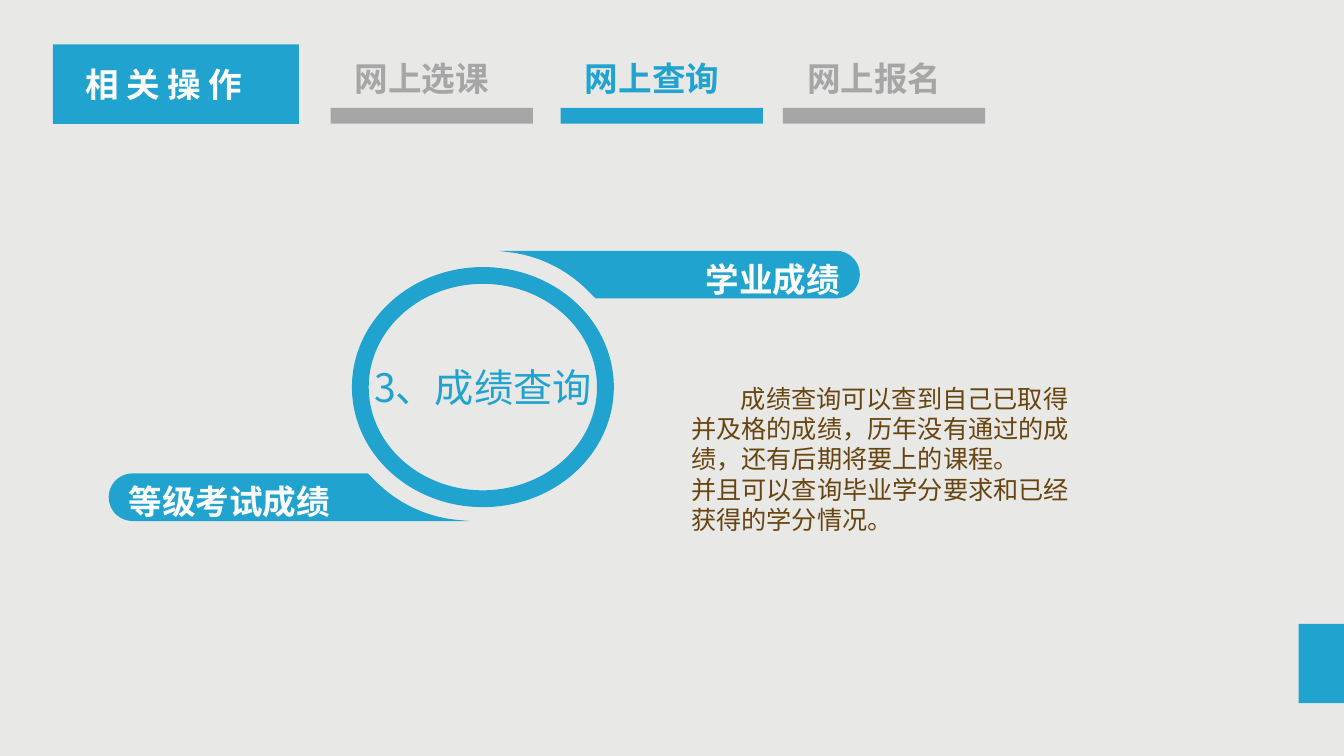
import math
from dataclasses import dataclass

import pptx
import pptx.util
import pptx.dml.color
import pptx.enum.shapes
import pptx.enum.text
import pptx.oxml
import pptx.oxml.ns

Cm = pptx.util.Cm
Pt = pptx.util.Pt
SHAPE = pptx.enum.shapes.MSO_SHAPE
ALIGN = pptx.enum.text.PP_ALIGN
ANCHOR = pptx.enum.text.MSO_ANCHOR


@dataclass(frozen=True)
class Theme:
    background: str = "E8E8E6"
    accent: str = "21A3D0"
    muted: str = "A6A6A6"
    light: str = "FFFFFF"
    brown: str = "684410"
    font: str = "Noto Sans CJK SC"
    body_font: str = "Calibri"
    heading: int = 24
    topic: int = 28
    body: int = 18


THEME = Theme()


def rgb(value):
    return pptx.dml.color.RGBColor.from_string(value)


def paint(sp, color):
    sp.shadow.inherit = False
    sp.fill.solid()
    sp.fill.fore_color.rgb = rgb(color)
    sp.line.fill.background()


def write(sp, text, size, color, bold=False, align=ALIGN.LEFT, font=THEME.font,
          anchor=ANCHOR.MIDDLE, wrap=True, side=0.25, spacing=1.0):
    tf = sp.text_frame
    tf.text = text
    tf.word_wrap = wrap
    tf.vertical_anchor = anchor
    tf.margin_left = tf.margin_right = Cm(side)
    tf.margin_top = tf.margin_bottom = Cm(0.13)
    for p in tf.paragraphs:
        p.alignment = align
        p.line_spacing = spacing
        for r in p.runs:
            r.font.name = font
            r.font.size = Pt(size)
            r.font.bold = bold
            r.font.color.rgb = rgb(color)
            ea = pptx.oxml.parse_xml(
                f'<a:ea {pptx.oxml.ns.nsdecls("a")} typeface="{THEME.font}"/>')
            r.font._element.find(pptx.oxml.ns.qn("a:latin")).addnext(ea)
    return tf


def add_bar(s, left, top, width, height, color):
    sp = s.shapes.add_shape(SHAPE.RECTANGLE, Cm(left), Cm(top), Cm(width), Cm(height))
    paint(sp, color)


def add_title(s, text):
    sp = s.shapes.title
    sp.left, sp.top, sp.width, sp.height = Cm(1.33), Cm(1.12), Cm(6.2), Cm(2)
    sp.fill.solid()
    sp.fill.fore_color.rgb = rgb(THEME.accent)
    write(sp, text, THEME.heading, THEME.light, bold=True, side=0.82)


def add_tab(s, left, text, color):
    add_bar(s, left, 2.72, 5.1, 0.4, color)
    sp = s.shapes.add_textbox(Cm(left + 0.36), Cm(1.32), Cm(4.4), Cm(1.28))
    write(sp, text, THEME.heading, color, bold=True, align=ALIGN.JUSTIFY,
          anchor=ANCHOR.TOP)


def bezier(points, steps=16):
    for i in range(1, steps + 1):
        t = i / steps
        weights = ((1 - t) ** 3, 3 * t * (1 - t) ** 2, 3 * t * t * (1 - t), t ** 3)
        yield tuple(sum(w * pt[axis] for w, pt in zip(weights, points)) for axis in (0, 1))


def add_banner(s, cap_x, cap_y, corner, direction, text, align):
    radius = 0.6
    tip = (-8.5, -radius)
    angles = [math.radians(a) for a in range(-90, 91, 10)]
    cap = [(radius * math.cos(a), radius * math.sin(a)) for a in angles]
    sweep = [(-corner - dx, y) for dx, y in
             ((0.2, 0.4), (0.74, -0.14), (1.45, -0.49), (2.23, -0.57))]
    outline = [tip, *cap, (-corner, radius), sweep[0], *bezier(sweep)]
    points = [(Cm(cap_x + direction * x), Cm(cap_y + direction * y)) for x, y in outline]
    fb = s.shapes.build_freeform(*points[0])
    fb.add_line_segments(points[1:], close=True)
    sp = fb.convert_to_shape()
    paint(sp, THEME.accent)
    write(sp, text, THEME.heading, THEME.light, bold=True, align=align,
          side=0.5, spacing=1.2)


def add_ring(s, text):
    sp = s.shapes.add_shape(SHAPE.DONUT, Cm(8.87), Cm(6.73), Cm(6.6), Cm(6.05))
    sp.adjustments[0] = 0.07
    paint(sp, THEME.accent)
    write(sp, text, THEME.topic, THEME.accent, align=ALIGN.CENTER, wrap=False, side=0)


def add_body(s, text):
    sp = s.shapes.add_textbox(Cm(17.17), Cm(9.53), Cm(10.39), Cm(4.11))
    tf = write(sp, text, THEME.body, THEME.brown, font=THEME.body_font,
               anchor=ANCHOR.TOP)
    tf.paragraphs[0]._p.get_or_add_pPr().set("indent", str(Cm(1.25)))


def main():
    prs = pptx.Presentation()
    prs.slide_width, prs.slide_height = Cm(33.87), Cm(19.05)
    s = prs.slides.add_slide(prs.slide_layouts[5])
    s.background.fill.solid()
    s.background.fill.fore_color.rgb = rgb(THEME.background)

    add_title(s, "相 关 操 作")
    for left, text, color in ((8.33, "网上选课", THEME.muted),
                              (14.13, "网上查询", THEME.accent),
                              (19.73, "网上报名", THEME.muted)):
        add_tab(s, left, text, color)
    add_banner(s, 21.07, 6.92, 6.06, 1, "学业成绩", ALIGN.RIGHT)
    add_banner(s, 3.34, 12.53, 5.93, -1, "等级考试成绩", ALIGN.LEFT)
    add_ring(s, "3、成绩查询")
    add_body(s, "成绩查询可以查到自己已取得并及格的成绩，历年没有通过的成绩，还有后期将要上的课程。\n"
                "并且可以查询毕业学分要求和已经获得的学分情况。")
    add_bar(s, 32.73, 15.72, 1.14, 2, THEME.accent)

    prs.save("out.pptx")


if __name__ == "__main__":
    main()
